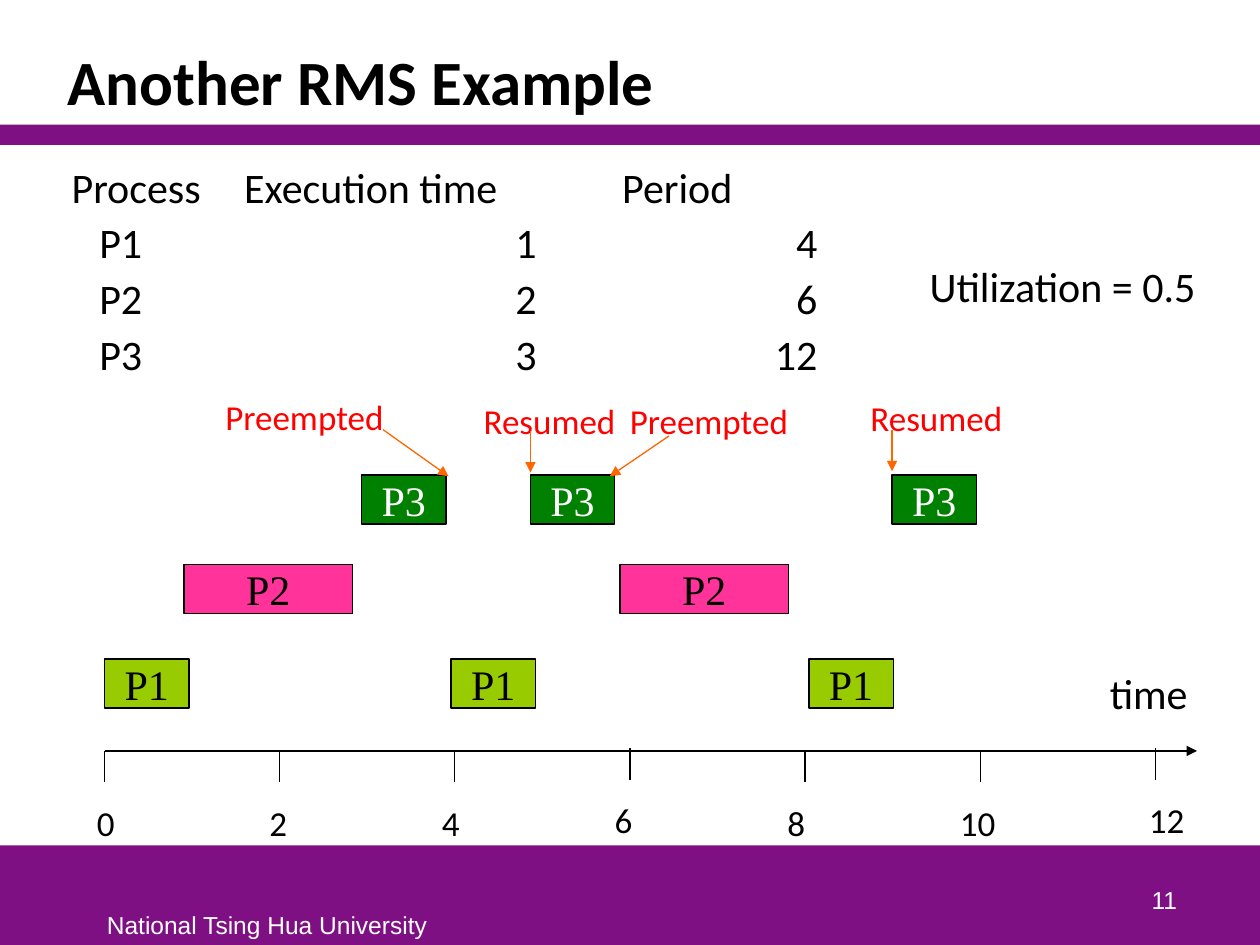
from lxml.etree import SubElement
from pptx import Presentation
from pptx.dml.color import RGBColor
from pptx.enum.shapes import MSO_CONNECTOR, MSO_SHAPE
from pptx.enum.text import MSO_ANCHOR as Anchor, PP_ALIGN as Align
from pptx.oxml.ns import qn
from pptx.util import Inches, Pt

BLACK = RGBColor(0, 0, 0)
WHITE = RGBColor(255, 255, 255)
PURPLE = RGBColor(0x7F, 0x10, 0x84)
LIME = RGBColor(0x99, 0xCC, 0)
PINK = RGBColor(0xFF, 0x33, 0x99)
GREEN = RGBColor(0, 0x80, 0)
RED = RGBColor(255, 0, 0)
ORANGE = RGBColor(0xFF, 0x66, 0)

BODY = {"name": "Calibri", "size": Pt(24), "color": BLACK}
TITLE = BODY | {"size": Pt(36), "bold": True}
TICK = BODY | {"size": Pt(20)}
NOTE = TICK | {"color": RED}
FOOTER = {"name": "Arial", "size": Pt(14), "color": WHITE}
BLOCK = {"name": "Times New Roman", "size": Pt(24)}

BANDS = [(6.71, 0.79), (0.99, 0.16)]
HEADER = ("Process", "Execution time", "Period")
PROCESSES = [("P1", 1, 4), ("P2", 2, 6), ("P3", 3, 12)]
HEADER_TABS = [(1.37, "l"), (4.37, "l")]
ROW_TABS = [(0.22, "l"), (3.69, "r"), (5.92, "r")]

TEXTS = [
    ("National Tsing Hua University", (0.75, 7.17, 2.76, 0.33), FOOTER, {}),
    ("Another RMS Example", (0.44, 0.25, 8.97, 0.74), TITLE,
     {"wrap": True, "anchor": Anchor.BOTTOM, "spacing": 0.85}),
    ("time", (8.71, 5.25, 0.83, 0.5), BODY, {}),
    ("11", (7.36, 6.81, 2.08, 0.5), FOOTER,
     {"wrap": True, "anchor": Anchor.BOTTOM, "align": Align.RIGHT}),
    ("Utilization = 0.5", (7.28, 2.02, 2.38, 0.5), BODY, {"wrap": True}),
]
SCHEDULE = [
    ("P1", 5.23, 1, LIME, BLACK, (0.83, 3.58, 6.42)),
    ("P2", 4.48, 2, PINK, BLACK, (1.46, 4.92)),
    ("P3", 3.77, 1, GREEN, WHITE, (2.87, 4.21, 7.08)),
]
NOTES = [
    ("Preempted", (1.69, 3.09, 1.47, 0.44), (3.04, 3.41), (3.56, 3.78)),
    ("Resumed", (3.74, 3.12, 1.26, 0.44), (4.21, 3.42), (4.21, 3.75)),
    ("Preempted", (4.9, 3.12, 1.47, 0.44), (5.31, 3.46), (4.84, 3.78)),
    ("Resumed", (6.81, 3.1, 1.26, 0.44), (7.08, 3.41), (7.08, 3.74)),
]
AXIS_LEFT, AXIS_RIGHT, AXIS_TOP = 0.83, 9.5, 5.96
TICK_STEP, TICK_HEIGHT = 1.39, 0.25
LABEL_LEFT, LABEL_STEP = 0.67, 1.37
LAST_LABEL_LEFT = 9.02
RAISED_TICKS = {6: 0.02, 12: 0.02}
UNIT_WIDTH, BLOCK_HEIGHT = 0.67, 0.39


def style(font, look):
    for key, value in look.items():
        if key == "color":
            font.color.rgb = value
        else:
            setattr(font, key, value)


def add_text(shapes, text, place, look, wrap=False, anchor=Anchor.TOP,
             align=Align.LEFT, spacing=None):
    box = shapes.add_textbox(*map(Inches, place))
    frame = box.text_frame
    frame.word_wrap = wrap
    frame.vertical_anchor = anchor
    para = frame.paragraphs[0]
    para.alignment = align
    if spacing:
        para.line_spacing = spacing
    span = para.add_run()
    span.text = text
    style(span.font, look)
    return frame


def add_rect(shapes, place, fill):
    rect = shapes.add_shape(MSO_SHAPE.RECTANGLE, *map(Inches, place))
    rect.shadow.inherit = False
    rect.fill.solid()
    rect.fill.fore_color.rgb = fill
    rect.line.fill.background()
    return rect


def add_line(shapes, start, end, color=BLACK, arrow=False):
    line = shapes.add_connector(MSO_CONNECTOR.STRAIGHT,
                                *map(Inches, (*start, *end)))
    line.line.color.rgb = color
    line.line.width = Pt(0.75)
    if arrow:
        SubElement(line.line._get_or_add_ln(), qn("a:tailEnd"), type="triangle")
    SubElement(line._element.spPr, qn("a:effectLst"))


def add_process_list(shapes):
    box = shapes.add_textbox(*map(Inches, (0.47, 1.15, 8.94, 5.51)))
    frame = box.text_frame
    frame.word_wrap = True
    frame.margin_top = Inches(0.13)
    rows = [(HEADER, HEADER_TABS)]
    rows += [(("", *process), ROW_TABS) for process in PROCESSES]
    for index, (cells, stops) in enumerate(rows):
        para = frame.add_paragraph() if index else frame.paragraphs[0]
        if index:
            para.space_before = Pt(3)
        tabs = SubElement(para._p.get_or_add_pPr(), qn("a:tabLst"))
        for position, side in stops:
            SubElement(tabs, qn("a:tab"), pos=str(Inches(position)), algn=side)
        span = para.add_run()
        span.text = "\t".join(map(str, cells))
        style(span.font, BODY)


def add_axis(shapes):
    add_line(shapes, (AXIS_LEFT, AXIS_TOP), (AXIS_RIGHT, AXIS_TOP), arrow=True)
    for index, time in enumerate(range(0, 13, 2)):
        lift = RAISED_TICKS.get(time, 0)
        left = AXIS_LEFT + index * TICK_STEP
        top = AXIS_TOP - lift
        add_line(shapes, (left, top), (left, top + TICK_HEIGHT))
        label_left = LAST_LABEL_LEFT if time == 12 else LABEL_LEFT + index * LABEL_STEP
        width = 0.34 if time < 10 else 0.49
        add_text(shapes, str(time), (label_left, 6.31 - lift, width, 0.44), TICK)


def add_schedule(shapes):
    for name, top, units, fill, ink, starts in SCHEDULE:
        for left in starts:
            rect = add_rect(shapes, (left, top, units * UNIT_WIDTH, BLOCK_HEIGHT), fill)
            rect.line.color.rgb = BLACK
            rect.line.width = Pt(0.75)
            frame = rect.text_frame
            frame.word_wrap = False
            frame.vertical_anchor = Anchor.MIDDLE
            para = frame.paragraphs[0]
            para.alignment = Align.CENTER
            span = para.add_run()
            span.text = name
            style(span.font, BLOCK | {"color": ink})


def main():
    deck = Presentation()
    deck.slide_width, deck.slide_height = Inches(10), Inches(7.5)
    page = deck.slides.add_slide(deck.slide_layouts[6])
    shapes = page.shapes
    for top, height in BANDS:
        add_rect(shapes, (0, top, 10, height), PURPLE)
    for text, place, look, options in TEXTS:
        add_text(shapes, text, place, look, **options)
    add_process_list(shapes)
    add_axis(shapes)
    add_schedule(shapes)
    for text, place, start, end in NOTES:
        group = shapes.add_group_shape()
        add_text(group.shapes, text, place, NOTE)
        add_line(group.shapes, start, end, ORANGE, arrow=True)
    deck.save("out.pptx")


if __name__ == "__main__":
    main()
